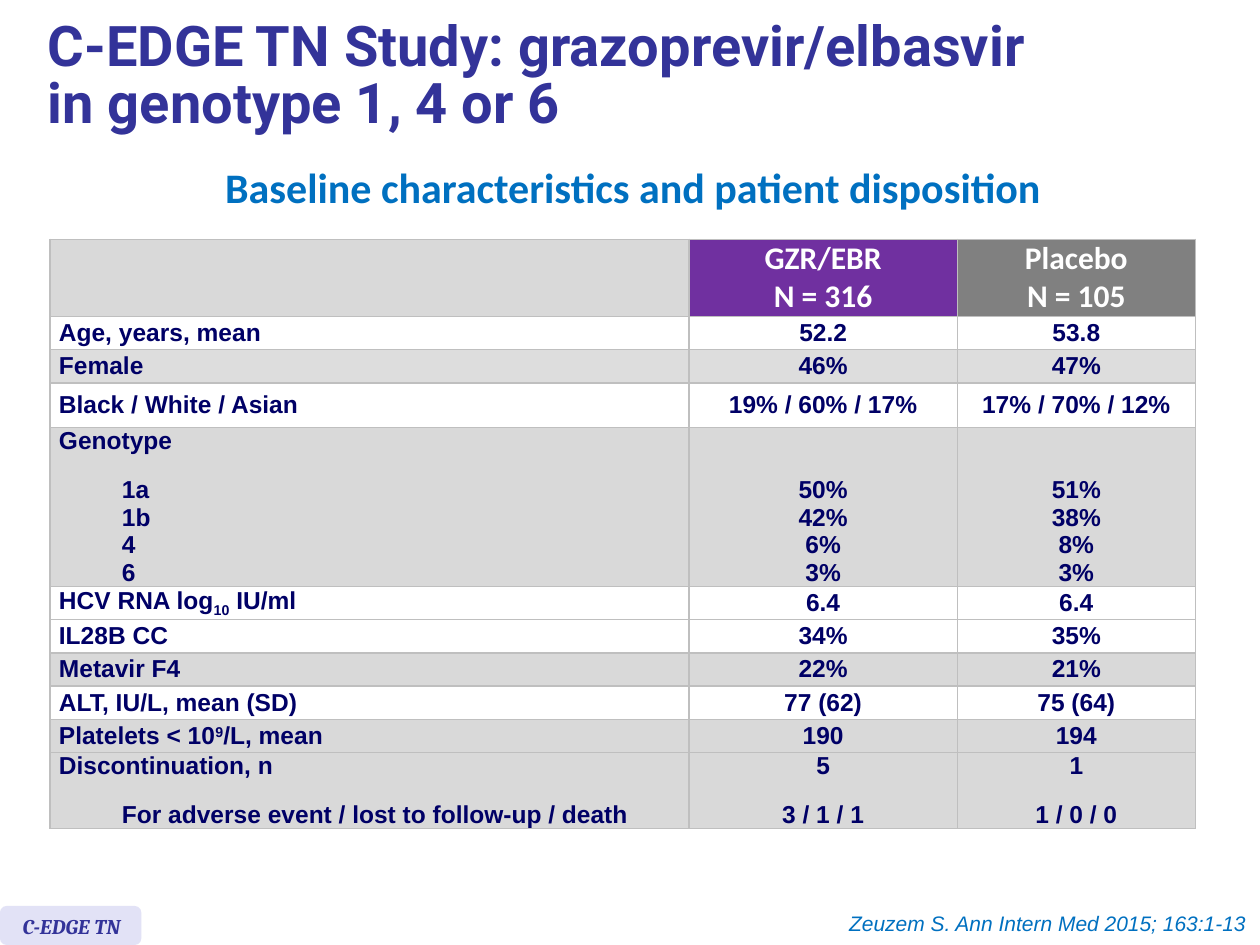
from dataclasses import dataclass

from lxml import etree
from pptx import Presentation
from pptx.dml.color import RGBColor
from pptx.enum import shapes, text
from pptx.oxml.ns import qn
from pptx.util import Pt

NAVY = RGBColor(0x00, 0x00, 0x66)
INDIGO = RGBColor(0x33, 0x33, 0x99)
BLUE = RGBColor(0x00, 0x70, 0xC0)
PURPLE = RGBColor(0x70, 0x30, 0xA0)
GRAY = RGBColor(0x80, 0x80, 0x80)
SILVER = RGBColor(0xD9, 0xD9, 0xD9)
PALE = RGBColor(0xDD, 0xDD, 0xDD)
RULE = RGBColor(0xBF, 0xBF, 0xBF)
LAVENDER = RGBColor(0xE2, 0xE2, 0xF6)
WHITE = RGBColor(0xFF, 0xFF, 0xFF)

LEFT, CENTER, RIGHT = text.PP_ALIGN.LEFT, text.PP_ALIGN.CENTER, text.PP_ALIGN.RIGHT
TOP, MIDDLE, BOTTOM = (text.MSO_ANCHOR.TOP, text.MSO_ANCHOR.MIDDLE,
                       text.MSO_ANCHOR.BOTTOM)


@dataclass
class Font:
    name: str
    size: float
    color: RGBColor
    bold: bool = True
    italic: bool = False


TITLE = Font("Roboto", 32, INDIGO)
SUBTITLE = Font("Calibri", 24, BLUE)
HEADER = Font("Calibri", 18, WHITE)
BODY = Font("Arial", 14, NAVY)
BADGE = Font("Cambria", 12, INDIGO, italic=True)
CITATION = Font("Arial", 12, BLUE, bold=False, italic=True)

COLUMNS = (365, 153.4, 136)
HEADINGS = (("", SILVER), ("GZR/EBR\nN = 316", PURPLE), ("Placebo\nN = 105", GRAY))
HEADER_HEIGHT, ROW_HEIGHT = 44, 19

# height, fill, label paragraphs, values for each arm
CHARACTERISTICS = (
    (ROW_HEIGHT, WHITE, ["Age, years, mean"], ["52.2"], ["53.8"]),
    (ROW_HEIGHT, PALE, ["Female"], ["46%"], ["47%"]),
    (25.6, WHITE, ["Black / White / Asian"], ["19% / 60% / 17%"], ["17% / 70% / 12%"]),
    (90.3, SILVER, ["Genotype", "1a\n1b\n4\n6"], ["50%\n42%\n6%\n3%"],
     ["51%\n38%\n8%\n3%"]),
    (ROW_HEIGHT, WHITE, [("HCV RNA log", ("10", -25), " IU/ml")], ["6.4"], ["6.4"]),
    (ROW_HEIGHT, WHITE, ["IL28B CC"], ["34%"], ["35%"]),
    (ROW_HEIGHT, SILVER, ["Metavir F4"], ["22%"], ["21%"]),
    (ROW_HEIGHT, WHITE, ["ALT, IU/L, mean (SD)"], ["77 (62)"], ["75 (64)"]),
    (ROW_HEIGHT, SILVER, [("Platelets < 10", ("9", 30), "/L, mean")], ["190"], ["194"]),
    (43.5, SILVER, ["Discontinuation, n", "For adverse event / lost to follow-up / death"],
     ["5", "3 / 1 / 1"], ["1", "1 / 0 / 0"]),
)


class StudySlide:
    """Draws the parts of a study slide in one style."""

    def __init__(self, slide):
        self.slide = slide

    def run(self, paragraph, words, font, baseline=0):
        for index, line in enumerate(words.split("\n")):
            if index:
                paragraph.add_line_break()
            run = paragraph.add_run()
            run.text = line
            run.font.name, run.font.size = font.name, Pt(font.size)
            run.font.bold, run.font.italic = font.bold, font.italic
            run.font.color.rgb = font.color
            if baseline:
                run._r.get_or_add_rPr().set("baseline", str(baseline * 1000))

    def label(self, left, top, width, height, words, font, align=LEFT, anchor=TOP,
              spacing=None):
        frame = self.slide.shapes.add_textbox(
            Pt(left), Pt(top), Pt(width), Pt(height)).text_frame
        frame.word_wrap = True
        frame.vertical_anchor = anchor
        paragraph = frame.paragraphs[0]
        paragraph.alignment = align
        paragraph.line_spacing = spacing
        self.run(paragraph, words, font)

    def plate(self, left, top, width, height, color):
        plate = self.slide.shapes.add_shape(
            shapes.MSO_SHAPE.ROUNDED_RECTANGLE, Pt(left), Pt(top), Pt(width), Pt(height))
        plate.shadow.inherit = False
        plate.fill.solid()
        plate.fill.fore_color.rgb = color
        plate.line.fill.background()

    def border(self, cell):
        properties = cell._tc.get_or_add_tcPr()
        for side in ("a:lnL", "a:lnR", "a:lnT", "a:lnB"):
            line = etree.SubElement(properties, qn(side), w=str(Pt(1)))
            fill = etree.SubElement(line, qn("a:solidFill"))
            etree.SubElement(fill, qn("a:srgbClr"), val=str(RULE))

    def cell(self, cell, paragraphs, font, fill, align, anchor=MIDDLE, inset=5):
        self.border(cell)
        cell.fill.solid()
        cell.fill.fore_color.rgb = fill
        cell.vertical_anchor = anchor
        cell.margin_left = cell.margin_right = Pt(inset)
        cell.margin_top = cell.margin_bottom = 0
        for index, pieces in enumerate(paragraphs):
            frame = cell.text_frame
            paragraph = frame.add_paragraph() if index else frame.paragraphs[0]
            paragraph.alignment = align
            if index:
                paragraph.space_before = Pt(12)
                if align == LEFT:
                    paragraph.level = 1
                    paragraph._p.get_or_add_pPr().set("marL", str(Pt(36)))
            for piece in (pieces,) if isinstance(pieces, str) else pieces:
                words, baseline = (piece, 0) if isinstance(piece, str) else piece
                self.run(paragraph, words, font, baseline)

    def table(self, left, top):
        heights = [HEADER_HEIGHT] + [row[0] for row in CHARACTERISTICS]
        table = self.slide.shapes.add_table(
            len(heights), len(COLUMNS), Pt(left), Pt(top),
            Pt(sum(COLUMNS)), Pt(sum(heights))).table
        table.horz_banding = False
        for column, width in zip(table.columns, COLUMNS):
            column.width = Pt(width)
        for row, height in zip(table.rows, heights):
            row.height = Pt(height)
        for column, (heading, fill) in enumerate(HEADINGS):
            self.cell(table.cell(0, column), [heading] if heading else [], HEADER, fill,
                      CENTER, inset=7.2)
        for row, (_, fill, *contents) in enumerate(CHARACTERISTICS, 1):
            for column, paragraphs in enumerate(contents):
                shorter = len(paragraphs) < len(contents[0])
                self.cell(table.cell(row, column), paragraphs, BODY, fill,
                          CENTER if column else LEFT, BOTTOM if shorter else MIDDLE)


def main():
    deck = Presentation()
    deck.slide_width, deck.slide_height = Pt(720), Pt(540)
    study = StudySlide(deck.slides.add_slide(deck.slide_layouts[6]))
    study.table(28.7, 136.8)
    study.label(20.2, 5.8, 657.4, 77, "C-EDGE TN Study: grazoprevir/elbasvir\n"
                "in genotype 1, 4 or 6", TITLE, anchor=MIDDLE, spacing=0.85)
    study.plate(0, 517.7, 80.8, 22.3, LAVENDER)
    study.label(5.8, 518.4, 87.8, 36, "C-EDGE TN", BADGE)
    study.label(5.8, 88.6, 712, 36, "Baseline characteristics and patient disposition",
                SUBTITLE, CENTER)
    study.label(360, 517, 359.3, 21.6, "Zeuzem S. Ann Intern Med 2015; 163:1-13",
                CITATION, RIGHT)
    deck.save("out.pptx")


if __name__ == "__main__":
    main()
